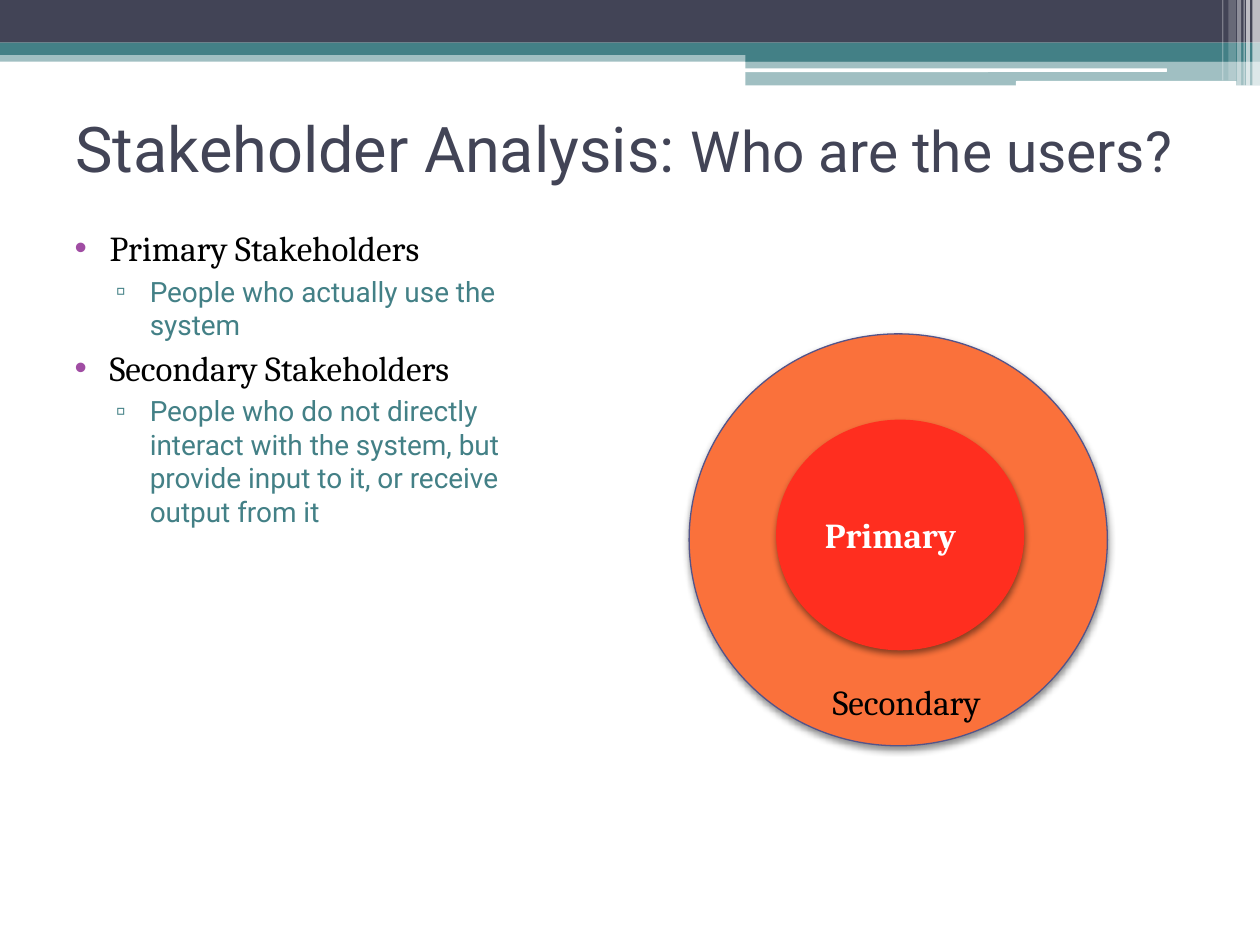
from lxml.etree import SubElement
from pptx import Presentation
from pptx.dml.color import RGBColor as RGB
from pptx.enum.shapes import MSO_SHAPE as Shape
from pptx.enum.text import MSO_ANCHOR as Anchor, MSO_AUTO_SIZE as Fit, PP_ALIGN as Align
from pptx.oxml import parse_xml
from pptx.oxml.ns import nsdecls, qn
from pptx.util import Pt

HUES = {"navy": "424456", "teal": "438086", "white": "FFFFFF", "black": "000000",
        "plum": "A04DA3", "orange": "FA713B", "red": "FF2E1F", "edge": "53548A"}


def add_form(kind, box, hue, alpha=100):
    """Add a borderless, shadowless filled shape; alpha is opacity in percent."""
    form = slide.shapes.add_shape(kind, *map(Pt, box))
    form.shadow.inherit = False
    form.fill.solid()
    form.fill.fore_color.rgb = RGB.from_string(HUES[hue])
    form.line.fill.background()
    if alpha < 100:
        tint = form._element.spPr.find(".//" + qn("a:srgbClr"))
        SubElement(tint, qn("a:alpha"), val=str(alpha * 1000))
    return form


def set_font(font, name, size, hue):
    font.name, font.size = name, Pt(size)
    font.color.rgb = RGB.from_string(HUES[hue])


deck = Presentation()
deck.slide_width, deck.slide_height = Pt(720), Pt(540)
slide = deck.slides.add_slide(deck.slide_layouts[1])
title, body = slide.placeholders

# Header bands
bands = [
    (Shape.RECTANGLE, (0, 28.8, 720, 6.5), "teal", 50),
    (Shape.RECTANGLE, (0, 0, 720, 24.4), "navy", 100),
    (Shape.RECTANGLE, (0, 24.4, 720, 7), "teal", 100),
    (Shape.RECTANGLE, (426, 28.2, 294, 7), "teal", 100),
    (Shape.RECTANGLE, (426, 34.8, 294, 14), "teal", 50),
    (Shape.ROUNDED_RECTANGLE, (425.6, 39.1, 241.2, 2.1), "white", 100),
    (Shape.ROUNDED_RECTANGLE, (580.5, 46.3, 126, 2.9), "white", 100),
]
for band in bands:
    add_form(*band)

# Pale stripes at the right end: left, width, height, opacity
stripes = [(715.7, 4.3, 49, 65), (712.1, 2.2, 49, 65), (710.6, 0.7, 49, 60),
           (707, 2.2, 49, 40), (702, 4.3, 46, 20), (698.4, 0.7, 46, 30)]
for left, width, height, alpha in stripes:
    add_form(Shape.RECTANGLE, (left, 0, width, height), "white", alpha)

# Title
title.left, title.top, title.width, title.height = map(Pt, (36, 42, 648, 84))
frame = title.text_frame
frame.auto_size, frame.vertical_anchor = Fit.NONE, Anchor.MIDDLE
line = frame.paragraphs[0]
line.alignment = Align.LEFT
for text, size in (("Stakeholder Analysis: ", 36), ("Who are the users?", 32.4)):
    run = line.add_run()
    run.text = text
    set_font(run.font, "Roboto", size, "navy")

# List
body.left, body.top, body.width, body.height = map(Pt, (26.6, 126, 282, 381.6))
frame = body.text_frame
frame.auto_size = Fit.NONE
items = [
    (0, "Primary Stakeholders"),
    (1, "People who actually use the system"),
    (0, "Secondary Stakeholders"),
    (1, "People who do not directly interact with the system, but provide input to it, "
        "or receive output from it"),
]
# Per level: indent, hang, bullet, bullet colour, font
levels = [(28.8, 20, "•", "plum", ("Cambria", 20, "black")),
          (51.8, 19.4, "▫", "teal", ("Roboto", 16, "teal"))]
for i, (level, text) in enumerate(items):
    line = frame.add_paragraph() if i else frame.paragraphs[0]
    line.text, line.level, line.space_before = text, level, Pt(3)
    indent, hang, mark, hue, font = levels[level]
    props = line._p.get_or_add_pPr()
    props.set("marL", str(Pt(indent)))
    props.set("indent", str(-Pt(hang)))
    SubElement(SubElement(props, qn("a:buClr")), qn("a:srgbClr"), val=HUES[hue])
    SubElement(props, qn("a:buFont"), typeface="Arial")
    SubElement(props, qn("a:buChar"), char=mark)
    set_font(line.font, *font)

# Placeholders go in front of the header
for holder in (title, body):
    slide.shapes._spTree.append(holder._element)

# Stakeholder rings
outer = add_form(Shape.OVAL, (393.8, 190.8, 239, 235.4), "orange")
outer.line.color.rgb = RGB.from_string(HUES["edge"])
outer.line.width = Pt(0.75)
inner = add_form(Shape.OVAL, (443.5, 239.8, 141.8, 131.8), "red")
for ring in (outer, inner):
    effects = ring._element.spPr.find(qn("a:effectLst"))
    effects.append(parse_xml(
        f'<a:outerShdw {nsdecls("a")} blurRad="{Pt(4)}" dist="{Pt(2)}" dir="5400000" '
        f'rotWithShape="0"><a:srgbClr val="{HUES["black"]}"><a:alpha val="45000"/>'
        '</a:srgbClr></a:outerShdw>'))

frame = inner.text_frame
frame.vertical_anchor = Anchor.MIDDLE
line = frame.paragraphs[0]
line.text, line.alignment = "Primary", Align.JUSTIFY
set_font(line.font, "Cambria", 20, "white")
line.font.bold = True

label = slide.shapes.add_textbox(*map(Pt, (468.7, 385.2, 100, 31.5)))
frame = label.text_frame
frame.word_wrap, frame.auto_size = False, Fit.SHAPE_TO_FIT_TEXT
line = frame.paragraphs[0]
line.text = "Secondary"
set_font(line.font, "Cambria", 20, "black")

deck.save("out.pptx")
